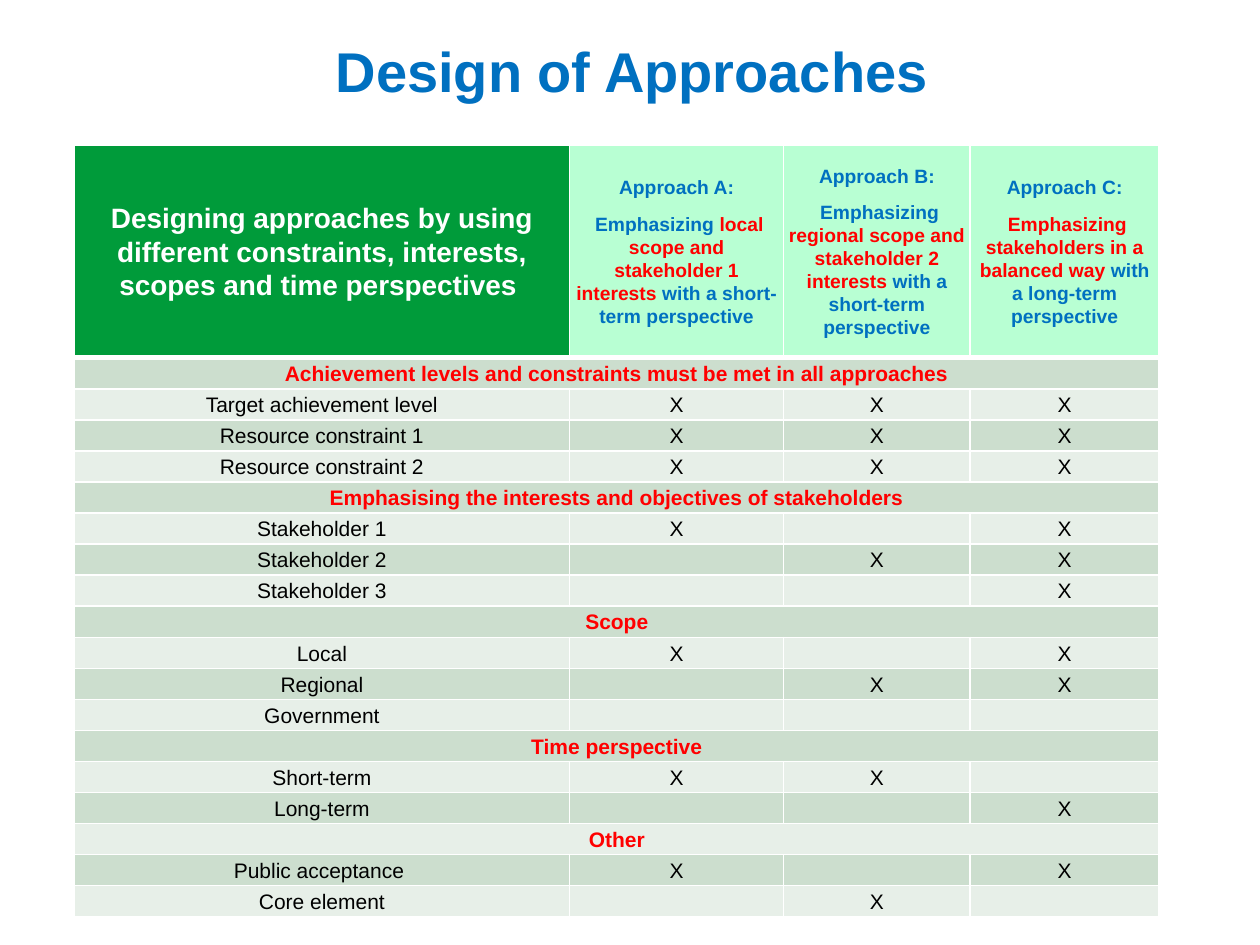
from lxml.etree import SubElement
from pptx import Presentation
from pptx.dml.color import RGBColor
from pptx.enum.text import MSO_ANCHOR, PP_ALIGN
from pptx.oxml import parse_xml
from pptx.oxml.ns import nsdecls, qn
from pptx.util import Inches, Pt

FONT = "Arial"
BLUE, RED, BLACK, WHITE = "0070C0", "FF0000", "000000", "FFFFFF"
GREEN, MINT = "009B3A", "B8FFD3"
BANDS = ("CCDECE", "E7EFE8")

TITLE = " Design of Approaches"
INTRO = ("Designing approaches by using different constraints, interests, "
         "scopes and time perspectives ")
# Each approach: its heading, then (text, colour) pieces of its description
APPROACHES = [
    ("Approach A:", [(" Emphasizing ", BLUE),
                     ("local scope and stakeholder 1 interests ", RED),
                     ("with a short-term perspective", BLUE)]),
    ("Approach B:", [(" Emphasizing ", BLUE),
                     ("regional scope and stakeholder 2 interests", RED),
                     (" with a short-term perspective", BLUE)]),
    ("Approach C:", [(" ", BLUE),
                     ("Emphasizing stakeholders in a balanced way ", RED),
                     ("with a long-term perspective", BLUE)]),
]
# Each section: its heading, then (criterion, approaches marked with X)
SECTIONS = [
    ("Achievement levels and constraints must be met in all approaches", [
        ("Target achievement level", "ABC"),
        ("Resource constraint 1", "ABC"),
        ("Resource constraint 2", "ABC")]),
    ("Emphasising the interests and objectives of stakeholders", [
        ("Stakeholder 1", "AC"), ("Stakeholder 2", "BC"), ("Stakeholder 3", "C")]),
    ("Scope", [("Local", "AC"), ("Regional", "BC"), ("Government", "")]),
    ("Time perspective", [("Short-term", "AB"), ("Long-term", "C")]),
    ("Other", [("Public acceptance ", "AC"), ("Core element", "B")]),
]

LEFT, TABLE_TOP, TABLE_HEIGHT = 0.59, 1.15, 6.13
COLUMN_WIDTHS = (3.93, 1.7, 1.48, 1.5)
HEADER_HEIGHT = 1.69
THIN, THICK = 1, 3


def rgb(color):
    return RGBColor.from_string(color)


def style_font(font, size, color, bold):
    font.name, font.size, font.bold = FONT, Pt(size), bold
    font.color.rgb = rgb(color)


def set_borders(cell, top=THIN, bottom=THIN):
    properties = cell._tc.get_or_add_tcPr()
    widths = {"lnL": THIN, "lnR": THIN, "lnT": top, "lnB": bottom}
    for position, (side, width) in enumerate(widths.items()):
        properties.insert(position, parse_xml(
            f'<a:{side} {nsdecls("a")} w="{Pt(width)}"><a:solidFill>'
            f'<a:srgbClr val="{WHITE}"/></a:solidFill></a:{side}>'))


def fill_cell(cell, paragraphs, size, fill, bold=False, **borders):
    """Write paragraphs, each a list of (text, colour) pieces, into a cell."""
    cell.fill.solid()
    cell.fill.fore_color.rgb = rgb(fill)
    set_borders(cell, **borders)
    cell.vertical_anchor = MSO_ANCHOR.MIDDLE
    cell.margin_left = cell.margin_right = Inches(0.04)
    cell.margin_top = cell.margin_bottom = 0
    frame = cell.text_frame
    for index, pieces in enumerate(paragraphs):
        paragraph = frame.add_paragraph() if index else frame.paragraphs[0]
        paragraph.alignment = PP_ALIGN.CENTER
        paragraph.line_spacing = 1.07
        if index < len(paragraphs) - 1:
            paragraph.space_after = Pt(8)
        for text, color in pieces:
            run = paragraph.add_run()
            run.text = text
            style_font(run.font, size, color, bold)
        if not pieces:  # keeps an empty cell from stretching its row
            SubElement(paragraph._p, qn("a:endParaRPr"), sz=str(size * 100))


def add_title(slide):
    title = slide.shapes.title
    title.left, title.top = Inches(LEFT), Inches(0.29)
    title.width, title.height = Inches(8.73), Inches(1.18)
    frame = title.text_frame
    frame.text = TITLE
    frame.word_wrap = True
    frame.vertical_anchor = MSO_ANCHOR.TOP
    frame.margin_left = frame.margin_right = 0
    frame.margin_top = frame.margin_bottom = 0
    paragraph = frame.paragraphs[0]
    paragraph.alignment = PP_ALIGN.CENTER
    style_font(paragraph.runs[0].font, 32, BLUE, True)


def add_approach_table(slide):
    row_count = 1 + sum(1 + len(criteria) for _, criteria in SECTIONS)
    table = slide.shapes.add_table(
        row_count, len(COLUMN_WIDTHS), Inches(LEFT), Inches(TABLE_TOP),
        Inches(sum(COLUMN_WIDTHS)), Inches(TABLE_HEIGHT)).table
    table.first_row = table.horz_banding = False
    for column, width in zip(table.columns, COLUMN_WIDTHS):
        column.width = Inches(width)
    body_height = (TABLE_HEIGHT - HEADER_HEIGHT) / (row_count - 1)
    for index, row in enumerate(table.rows):
        row.height = Inches(body_height if index else HEADER_HEIGHT)

    fill_cell(table.cell(0, 0), [[(INTRO, WHITE)]], 16, GREEN, True, bottom=THICK)
    for column, (heading, description) in enumerate(APPROACHES, 1):
        fill_cell(table.cell(0, column), [[(heading, BLUE)], description],
                  11, MINT, True, bottom=THICK)

    row = 1
    for heading, criteria in SECTIONS:
        top = THICK if row == 1 else THIN
        band = BANDS[(row - 1) % 2]
        table.cell(row, 0).merge(table.cell(row, len(APPROACHES)))
        fill_cell(table.cell(row, 0), [[(heading, RED)]], 12, band, True, top=top)
        for column in range(1, len(COLUMN_WIDTHS)):
            fill_cell(table.cell(row, column), [[]], 12, band, top=top)
        for row, (criterion, marked) in enumerate(criteria, row + 1):
            band = BANDS[(row - 1) % 2]
            fill_cell(table.cell(row, 0), [[(criterion, BLACK)]], 12, band)
            for column, approach in enumerate("ABC", 1):
                mark = [("X", BLACK)] if approach in marked else []
                fill_cell(table.cell(row, column), [mark], 12, band)
        row += 1


def main():
    presentation = Presentation()
    presentation.slide_width, presentation.slide_height = Inches(10), Inches(7.5)
    slide = presentation.slides.add_slide(presentation.slide_layouts[5])
    add_title(slide)
    add_approach_table(slide)
    presentation.save("out.pptx")


if __name__ == "__main__":
    main()
